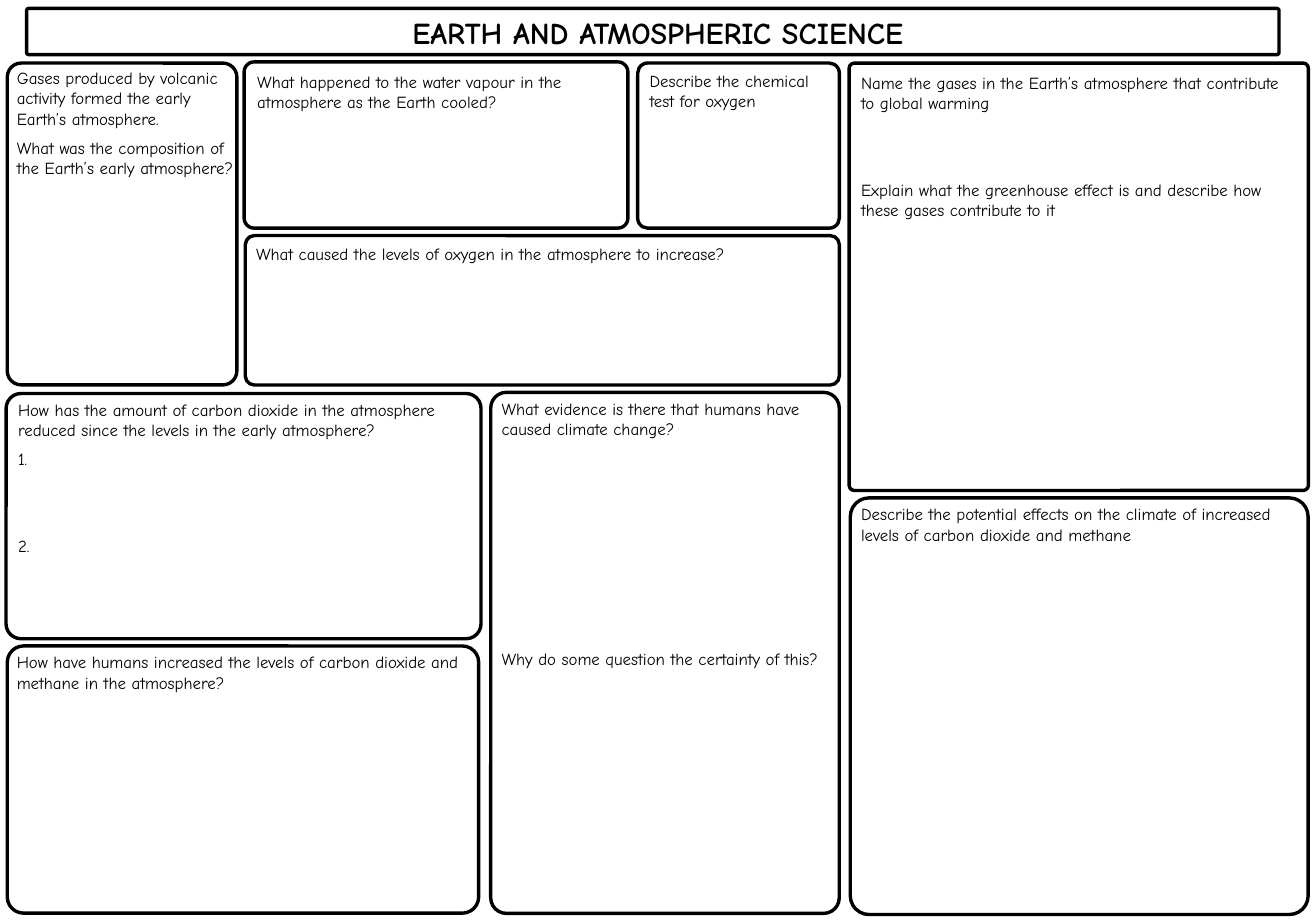
"""Build a one-page revision worksheet on Earth and atmospheric science."""
from dataclasses import dataclass
from typing import NamedTuple

from pptx import Presentation
from pptx.dml.color import RGBColor
from pptx.enum.shapes import MSO_SHAPE
from pptx.enum.text import PP_ALIGN
from pptx.slide import Slide
from pptx.util import Pt

ROUNDED = MSO_SHAPE.ROUNDED_RECTANGLE
LEFT = PP_ALIGN.LEFT
CENTER = PP_ALIGN.CENTER


@dataclass(frozen=True)
class Theme:
    """Colours, type sizes and spacing of the worksheet, in points."""

    font: str = "Comic Neue"
    ink: RGBColor = RGBColor(0, 0, 0)
    title_size: float = 18
    prompt_size: float = 10
    outline: float = 2
    paragraph_gap: float = 5.25
    answer_line: float = 17


class Box(NamedTuple):
    """A rectangle in points."""

    left: float
    top: float
    width: float
    height: float


class Prompt(NamedTuple):
    """A question and the number of answer lines left free above it."""

    text: str
    answer_lines: int = 0


@dataclass(frozen=True)
class Panel:
    """A rounded frame with its text area and prompts."""

    frame: Box
    text_area: Box
    prompts: tuple[Prompt, ...]
    corner: float = 0.061
    is_title: bool = False


THEME = Theme()

PANELS = (
    Panel(Box(15.8, 5, 742.3, 27.4), Box(17.3, 5, 745.2, 28.8),
          (Prompt("EARTH AND ATMOSPHERIC SCIENCE"),),
          corner=0.045, is_title=True),
    Panel(Box(4.3, 37.4, 136.1, 190.8), Box(2.9, 36.7, 147.6, 122.4),
          (Prompt("Gases produced by volcanic activity formed the early Earth’s atmosphere."),
           Prompt("What was the composition of the Earth’s early atmosphere?"))),
    Panel(Box(144.7, 36.7, 227.5, 98.6), Box(145.4, 38.9, 221, 31.7),
          (Prompt("What happened to the water vapour in the atmosphere as the Earth cooled?"),)),
    Panel(Box(378, 37.4, 119.5, 97.9), Box(378, 38.2, 125.3, 67.7),
          (Prompt("Describe the chemical test for oxygen"),)),
    Panel(Box(145.4, 139.7, 352.1, 88.6), Box(144.7, 141.1, 352.8, 19.4),
          (Prompt("What caused the levels of oxygen in the atmosphere to increase?"),)),
    Panel(Box(503.3, 37.4, 272.2, 253.4), Box(503.3, 39.6, 272.2, 97.9),
          (Prompt("Name the gases in the Earth’s atmosphere that contribute to global warming"),
           Prompt("Explain what the greenhouse effect is and describe how "
                  "these gases contribute to it", 2)),
          corner=0.012),
    Panel(Box(3.6, 233.3, 281.5, 145.4), Box(3.6, 233.3, 288.7, 104.4),
          (Prompt("How has the amount of carbon dioxide in the atmosphere "
                  "reduced since the levels in the early atmosphere?"),
           Prompt("1."),
           Prompt("2.", 2))),
    Panel(Box(290.9, 232.6, 206.6, 308.9), Box(290.2, 232.6, 207.4, 207.4),
          (Prompt("What evidence is there that humans have caused climate change?"),
           Prompt("Why do some question the certainty of this?", 7)),
          corner=0.045),
    Panel(Box(504, 295.2, 271.4, 247), Box(503.3, 295.2, 272.2, 49.7),
          (Prompt("Describe the potential effects on the climate of increased "
                  "levels of carbon dioxide and methane"),),
          corner=0.045),
    Panel(Box(4.3, 383, 279.4, 158.4), Box(2.9, 383, 279.4, 67.7),
          (Prompt("How have humans increased the levels of carbon dioxide and "
                  "methane in the atmosphere?"),)),
)


def draw_frame(slide: Slide, panel: Panel) -> None:
    """Draw the rounded outline of a panel."""
    shape = slide.shapes.add_shape(ROUNDED, *map(Pt, panel.frame))
    shape.adjustments[0] = panel.corner
    shape.shadow.inherit = False
    shape.fill.background()
    shape.line.color.rgb = THEME.ink
    shape.line.width = Pt(THEME.outline)


def write_prompts(slide: Slide, panel: Panel) -> None:
    """Write the prompts of a panel, leaving room for answers."""
    text_frame = slide.shapes.add_textbox(*map(Pt, panel.text_area)).text_frame
    text_frame.word_wrap = True
    for index, prompt in enumerate(panel.prompts):
        paragraph = text_frame.add_paragraph() if index else text_frame.paragraphs[0]
        paragraph.text = prompt.text
        paragraph.alignment = CENTER if panel.is_title else LEFT
        if index:
            paragraph.space_before = Pt(
                THEME.paragraph_gap + prompt.answer_lines * THEME.answer_line)
        font = paragraph.font
        font.name = THEME.font
        font.size = Pt(THEME.title_size if panel.is_title else THEME.prompt_size)
        font.bold = panel.is_title
        font.color.rgb = THEME.ink


def main() -> None:
    """Create the worksheet and save it."""
    presentation = Presentation()
    presentation.slide_width = Pt(780)
    presentation.slide_height = Pt(547.2)
    slide = presentation.slides.add_slide(presentation.slide_layouts[6])
    for panel in PANELS:
        draw_frame(slide, panel)
        write_prompts(slide, panel)
    presentation.save("out.pptx")


if __name__ == "__main__":
    main()
